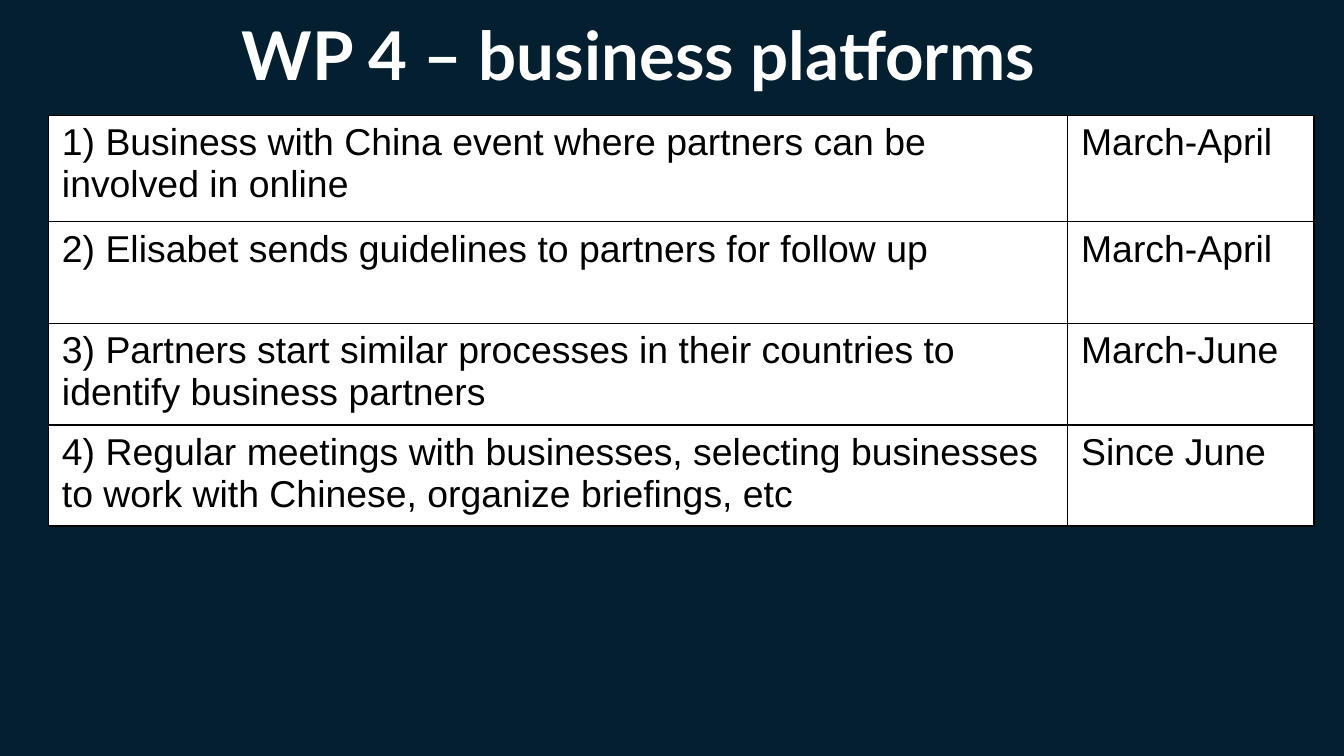
from lxml.etree import SubElement
from pptx import Presentation
from pptx.dml.color import RGBColor
from pptx.enum.text import MSO_ANCHOR, PP_ALIGN
from pptx.oxml.ns import qn
from pptx.util import Pt

COLORS = {"background": "041F30", "title": "FFFFFF", "cell": "FFFFFF", "text": "000000", "border": "000000"}

ACTIONS = [
    ("1) Business with China event where partners can be involved in online", "March-April"),
    ("2) Elisabet sends guidelines to partners for follow up", "March-April"),
    ("3) Partners start similar processes in their countries to identify business partners", "March-June"),
    ("4) Regular meetings with businesses, selecting businesses to work with Chinese, organize briefings, etc",
     "Since June"),
]
COLUMN_WIDTHS = [546, 132]
ROW_HEIGHTS = [57, 54.5, 54.5, 54]


def add_run(paragraph, text, font, size, color, bold=False):
    run = paragraph.add_run()
    run.text = text
    run.font.name = font
    run.font.size = Pt(size)
    run.font.bold = bold
    run.font.color.rgb = RGBColor.from_string(COLORS[color])


def style_cell(cell):
    properties = cell._tc.get_or_add_tcPr()
    for side in ("lnL", "lnR", "lnT", "lnB"):
        border = SubElement(properties, qn(f"a:{side}"), w=str(Pt(1)))
        SubElement(SubElement(border, qn("a:solidFill")), qn("a:srgbClr"), val=COLORS["border"])
    cell.fill.solid()
    cell.fill.fore_color.rgb = RGBColor.from_string(COLORS["cell"])


prs = Presentation()
prs.slide_width, prs.slide_height = Pt(720), Pt(405)
slide = prs.slides.add_slide(prs.slide_layouts[5])
slide.background.fill.solid()
slide.background.fill.fore_color.rgb = RGBColor.from_string(COLORS["background"])

title = slide.shapes.title
title.left, title.top, title.width, title.height = Pt(36), Pt(0), Pt(612), Pt(57.6)
title_frame = title.text_frame
title_frame.vertical_anchor = MSO_ANCHOR.BOTTOM
title_frame.margin_left = title_frame.margin_right = Pt(7.2)
title_frame.margin_top = title_frame.margin_bottom = Pt(7.2)
title_frame.paragraphs[0].alignment = PP_ALIGN.CENTER
add_run(title_frame.paragraphs[0], "WP 4 – business platforms", "Lato", 36, "title", bold=True)

schedule = slide.shapes.add_table(
    len(ACTIONS), len(COLUMN_WIDTHS), Pt(26), Pt(61.8), Pt(sum(COLUMN_WIDTHS)), Pt(sum(ROW_HEIGHTS))
).table
schedule.first_row = False
schedule.horz_banding = False
for column, width in zip(schedule.columns, COLUMN_WIDTHS):
    column.width = Pt(width)
for row, height, entries in zip(schedule.rows, ROW_HEIGHTS, ACTIONS):
    row.height = Pt(height)
    for cell, entry in zip(row.cells, entries):
        style_cell(cell)
        add_run(cell.text_frame.paragraphs[0], entry, "Arial", 20, "text")

prs.save("out.pptx")
